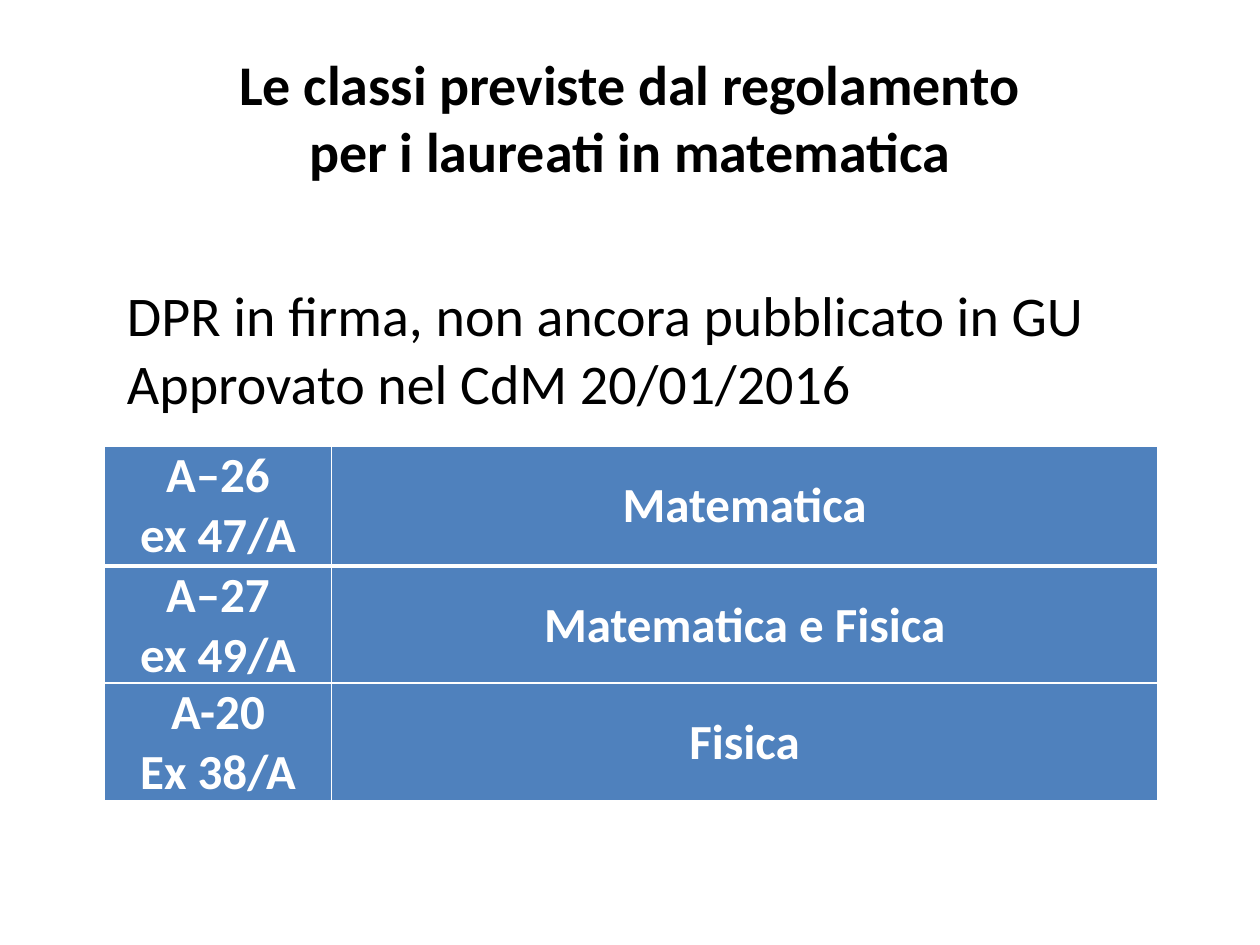
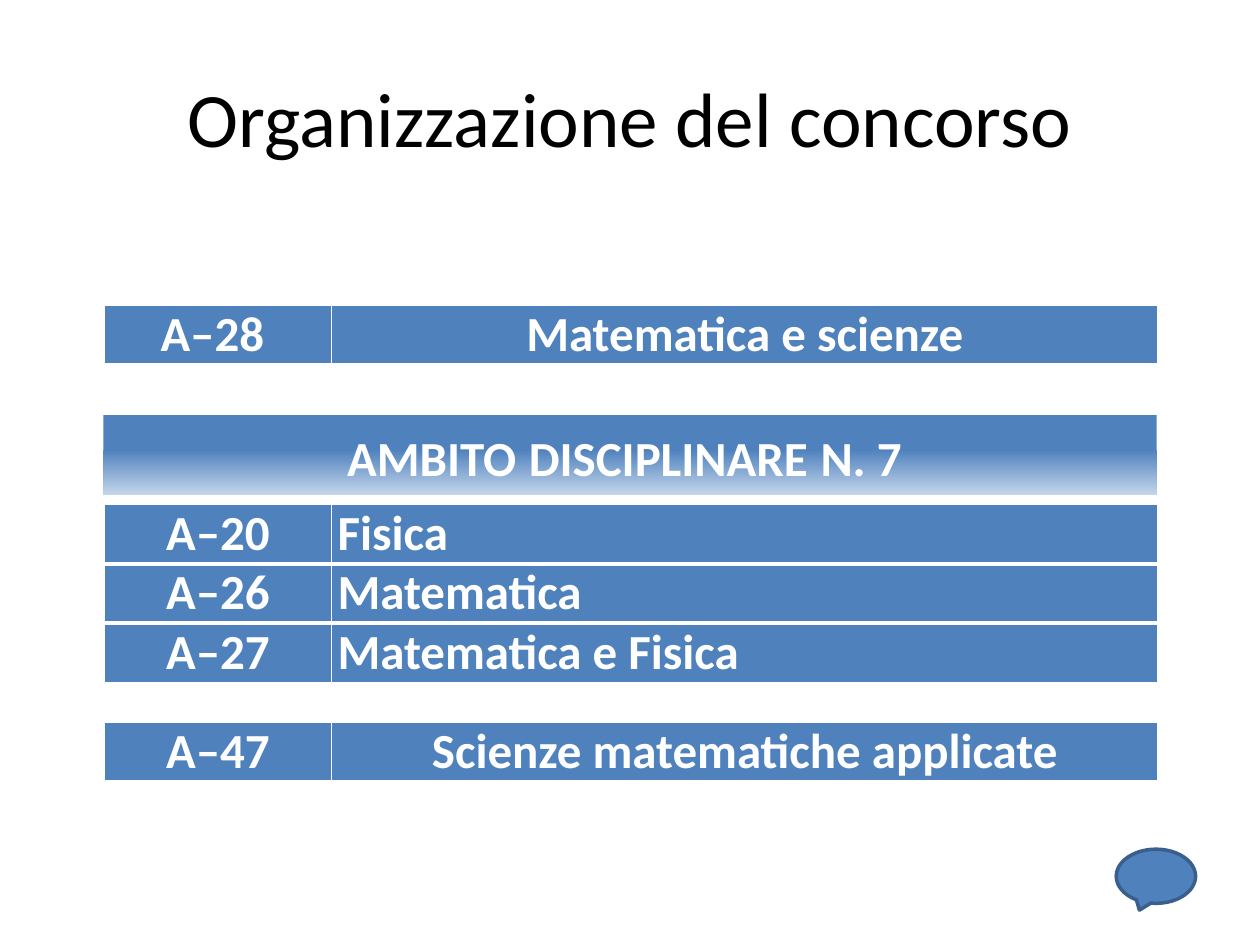
from lxml import etree
from pptx import Presentation
from pptx.dml.color import RGBColor
from pptx.enum.shapes import MSO_SHAPE
from pptx.enum.text import MSO_ANCHOR, PP_ALIGN
from pptx.oxml.ns import qn
from pptx.util import Inches, Pt

CENTER, LEFT = PP_ALIGN.CENTER, PP_ALIGN.LEFT
MIDDLE = MSO_ANCHOR.MIDDLE
RECTANGLE, CALLOUT = MSO_SHAPE.RECTANGLE, MSO_SHAPE.OVAL_CALLOUT

# Content
RULES_TITLE = ["Le classi previste dal regolamento", "per i laureati in matematica"]
RULES_NOTE = "DPR in firma, non ancora pubblicato in GU Approvato nel CdM 20/01/2016"
CONTEST_TITLE = ["Organizzazione del concorso"]
BAND_WORDS = ["AMBITO", "DISCIPLINARE", "N. 7 "]

# Tables: top, alignment of the subject, rows of (code lines, subject)
RULES_TABLES = [
    (3.54, CENTER, [(["A–26", "ex 47/A"], "Matematica"),
                    (["A–27", "ex 49/A"], "Matematica e Fisica")]),
    (5.42, CENTER, [(["A-20", "Ex 38/A"], "Fisica")]),
]
CONTEST_TABLES = [
    (2.42, CENTER, [(["A–28 "], "Matematica e scienze")]),
    (5.73, CENTER, [(["A–47"], "Scienze matematiche applicate")]),
    (4.47, LEFT, [(["A–26"], "Matematica"), (["A–27"], "Matematica e Fisica")]),
    (4.0, LEFT, [(["A–20"], "Fisica")]),
]

# Shared style
COLORS = {"text": "000000", "white": "FFFFFF", "blue": "4F81BD",
          "pale": "C4D6EB", "outline": "3A5F8C"}
FONT = "Calibri"
TABLE_LEFT, COLUMN_WIDTHS, LINE_HEIGHT = 0.83, (1.8, 6.56), 0.47
TABLE_WIDTH = sum(COLUMN_WIDTHS)
BORDER_TAGS = ("a:lnL", "a:lnR", "a:lnT", "a:lnB")


def color(name):
    return RGBColor.from_string(COLORS[name])


def add_span(para, text, size, color_name, bold=False):
    span = para.add_run()
    span.text = text
    span.font.name, span.font.size, span.font.bold = FONT, Pt(size), bold
    span.font.color.rgb = color(color_name)


def add_titled_slide(deck, lines, size, bold=False):
    page = deck.slides.add_slide(deck.slide_layouts[5])
    title = page.shapes.title
    title.left, title.top = Inches(0.5), Inches(0.3)
    title.width, title.height = Inches(9), Inches(1.25)
    title.text_frame.vertical_anchor = MIDDLE
    para = title.text_frame.paragraphs[0]
    para.alignment = CENTER
    for index, line in enumerate(lines):
        if index:
            para.add_line_break()
        add_span(para, line, size, "text", bold)
    return page


def set_borders(cell, bottom):
    properties = cell._tc.get_or_add_tcPr()
    for index, (tag, width) in enumerate(zip(BORDER_TAGS, (1, 1, 1, bottom))):
        line = etree.Element(qn(tag), w=str(Pt(width)))
        fill = etree.SubElement(line, qn("a:solidFill"))
        etree.SubElement(fill, qn("a:srgbClr"), val=COLORS["white"])
        properties.insert(index, line)


def fill_cell(cell, lines, alignment, bottom):
    cell.margin_left = cell.margin_right = Inches(0.05)
    cell.margin_top = cell.margin_bottom = 0
    cell.vertical_anchor = MIDDLE
    cell.fill.solid()
    cell.fill.fore_color.rgb = color("blue")
    set_borders(cell, bottom)
    for index, line in enumerate(lines):
        frame = cell.text_frame
        para = frame.add_paragraph() if index else frame.paragraphs[0]
        para.alignment = alignment
        add_span(para, line, 28, "white", True)


def add_class_table(page, top, alignment, rows):
    heights = [LINE_HEIGHT * len(codes) for codes, _ in rows]
    table = page.shapes.add_table(
        len(rows), 2, Inches(TABLE_LEFT), Inches(top),
        Inches(TABLE_WIDTH), Inches(sum(heights))).table
    table.first_row = table.horz_banding = False
    for column, width in zip(table.columns, COLUMN_WIDTHS):
        column.width = Inches(width)
    for index, (codes, subject) in enumerate(rows):
        table.rows[index].height = Inches(heights[index])
        bottom = 1 if index else 3
        fill_cell(table.cell(index, 0), codes, CENTER, bottom)
        fill_cell(table.cell(index, 1), [subject], alignment, bottom)


def add_plain_shape(page, kind, left, top, width, height):
    shape = page.shapes.add_shape(
        kind, Inches(left), Inches(top), Inches(width), Inches(height))
    shape.shadow.inherit = False
    return shape


def build_rules_slide(deck):
    page = add_titled_slide(deck, RULES_TITLE, 32, True)
    for table in RULES_TABLES:
        add_class_table(page, *table)
    note = page.shapes.add_textbox(
        Inches(0.91), Inches(2.18), Inches(8.27), Inches(1.18))
    note.text_frame.word_wrap = True
    add_span(note.text_frame.paragraphs[0], RULES_NOTE, 32, "text")


def build_contest_slide(deck):
    page = add_titled_slide(deck, CONTEST_TITLE, 44)
    for table in CONTEST_TABLES[:2]:
        add_class_table(page, *table)

    # Gradient band above the group of three classes
    band = add_plain_shape(page, RECTANGLE, 0.82, 3.29, TABLE_WIDTH, 0.64)
    band.line.fill.background()
    band.fill.gradient()
    band.fill.gradient_angle = 270
    stops = zip(band.fill.gradient_stops, ((0.43, "blue"), (1, "pale")))
    for stop, (position, name) in stops:
        stop.position = position
        stop.color.rgb = color(name)
    band.text_frame.word_wrap = True
    band.text_frame.vertical_anchor = MSO_ANCHOR.TOP
    para = band.text_frame.paragraphs[0]
    para.alignment = CENTER
    for index, word in enumerate(BAND_WORDS):
        if index:
            add_span(para, " ", 32, "text", True)
        add_span(para, word, 28, "white", True)

    for table in CONTEST_TABLES[2:]:
        add_class_table(page, *table)

    # Speech bubble in the corner
    bubble = add_plain_shape(page, CALLOUT, 8.86, 6.74, 0.63, 0.43)
    bubble.fill.solid()
    bubble.fill.fore_color.rgb = color("blue")
    bubble.line.color.rgb = color("outline")
    bubble.line.width = Pt(2)


def main():
    deck = Presentation()
    deck.slide_width, deck.slide_height = Inches(10), Inches(7.5)
    build_rules_slide(deck)
    build_contest_slide(deck)
    deck.save("out.pptx")


if __name__ == "__main__":
    main()
